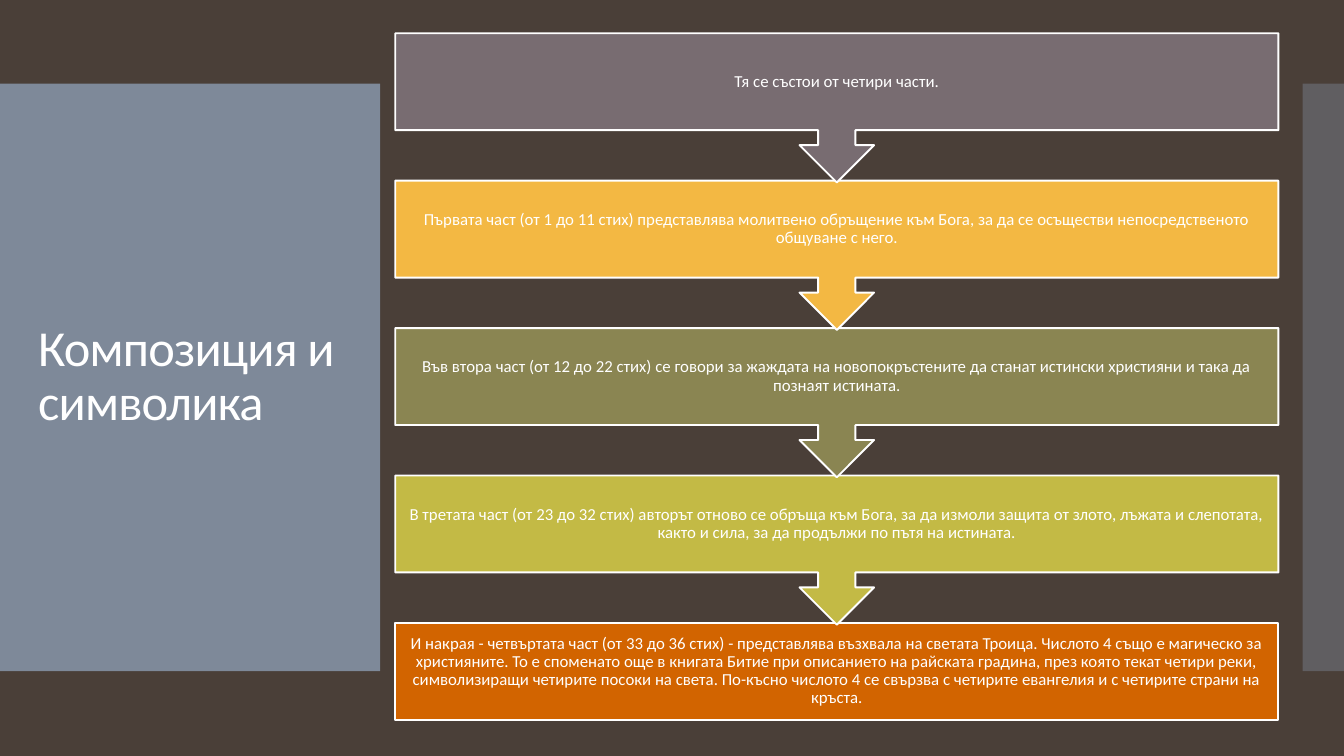
from lxml import etree
from pptx import Presentation
from pptx.dml.color import RGBColor
from pptx.enum.shapes import MSO_SHAPE
from pptx.enum.text import MSO_ANCHOR, PP_ALIGN
from pptx.oxml.ns import qn
from pptx.util import Inches, Pt

RECTANGLE = MSO_SHAPE.RECTANGLE
CALLOUT = MSO_SHAPE.DOWN_ARROW_CALLOUT
MIDDLE = MSO_ANCHOR.MIDDLE
LEFT, CENTER = PP_ALIGN.LEFT, PP_ALIGN.CENTER

TITLE = "Композиция и символика"
PARTS = [
    ("Тя се състои от четири части.", "786C71"),
    ("Първата част (от 1 до 11 стих) представлява молитвено обръщение към Бога, "
     "за да се осъществи непосредственото общуване с него.", "F3B843"),
    ("Във втора част (от 12 до 22 стих) се говори за жаждата на новопокръстените "
     "да станат истински християни и така да познаят истината.", "8A8552"),
    ("В третата част (от 23 до 32 стих) авторът отново се обръща към Бога, за да "
     "измоли защита от злото, лъжата и слепотата, както и сила, за да продължи "
     "по пътя на истината.", "C3BA45"),
    ("И накрая - четвъртата част (от 33 до 36 стих) - представлява възхвала на "
     "светата Троица. Числото 4 също е магическо за християните. То е споменато "
     "още в книгата Битие при описанието на райската градина, през която текат "
     "четири реки, символизиращи четирите посоки на света. По-късно числото 4 се "
     "свързва с четирите евангелия и с четирите страни на кръста.", "D26400"),
]
THEME = {
    "font": "Calibri", "background": "4A3F38", "panel": "818E9F", "light": "FFFFFF",
    "title_size": 36, "part_size": 12, "outline": 1.35, "title_spacing": -60,
}
# left, width, opacity in percent
PANELS = [(0, 3.77, 95), (12.92, 0.41, 40)]
PANEL_TOP, PANEL_HEIGHT = 0.83, 5.83
TITLE_BOX = (0.28, 1.23, 3.22, 5.03)
FLOW_LEFT, FLOW_TOP, FLOW_WIDTH = 3.92, 0.33, 8.76
BOX_HEIGHT, CALLOUT_HEIGHT, STEP = 0.96, 1.48, 1.4625
INSET = 0.09


def color(value):
    return RGBColor.from_string(value)


def add_block(slide, kind, box, fill):
    block = slide.shapes.add_shape(kind, *map(Inches, box))
    block.shadow.inherit = False
    block.fill.solid()
    block.fill.fore_color.rgb = color(fill)
    return block


def add_panel(slide, left, width, opacity):
    panel = add_block(slide, RECTANGLE, (left, PANEL_TOP, width, PANEL_HEIGHT), THEME["panel"])
    panel.line.fill.background()
    tint = panel.fill._xPr.find(qn("a:solidFill"))[0]
    etree.SubElement(tint, qn("a:alpha")).set("val", str(opacity * 1000))


def write(frame, text, size, align, inset):
    """Fill a text frame with one vertically centred paragraph and return its run."""
    side = Inches(inset)
    frame_format = {"word_wrap": True, "vertical_anchor": MIDDLE, "margin_left": side,
                    "margin_right": side, "margin_top": side, "margin_bottom": side}
    for name, value in frame_format.items():
        setattr(frame, name, value)
    paragraph = frame.paragraphs[0]
    paragraph.alignment = align
    paragraph.line_spacing = 0.9
    run = paragraph.add_run()
    run.text = text
    for name, value in {"name": THEME["font"], "size": Pt(size)}.items():
        setattr(run.font, name, value)
    run.font.color.rgb = color(THEME["light"])
    return run


def add_title(slide):
    title = slide.shapes.add_textbox(*map(Inches, TITLE_BOX))
    run = write(title.text_frame, TITLE, THEME["title_size"], LEFT, 0.1)
    run._r.get_or_add_rPr().set("spc", str(THEME["title_spacing"]))


def add_flow(slide):
    """Stack the parts from the bottom up, so each arrow tip overlaps the next box."""
    last = len(PARTS) - 1
    for index, (text, fill) in reversed(list(enumerate(PARTS))):
        kind, height = (RECTANGLE, BOX_HEIGHT) if index == last else (CALLOUT, CALLOUT_HEIGHT)
        box = (FLOW_LEFT, FLOW_TOP + index * STEP, FLOW_WIDTH, height)
        part = add_block(slide, kind, box, fill)
        part.line.color.rgb = color(THEME["light"])
        part.line.width = Pt(THEME["outline"])
        write(part.text_frame, text, THEME["part_size"], CENTER, INSET)


def main():
    deck = Presentation()
    deck.slide_width, deck.slide_height = Inches(13.33), Inches(7.5)
    slide = deck.slides.add_slide(deck.slide_layouts[6])
    slide.background.fill.solid()
    slide.background.fill.fore_color.rgb = color(THEME["background"])
    for panel in PANELS:
        add_panel(slide, *panel)
    add_title(slide)
    add_flow(slide)
    deck.save("out.pptx")


if __name__ == "__main__":
    main()
